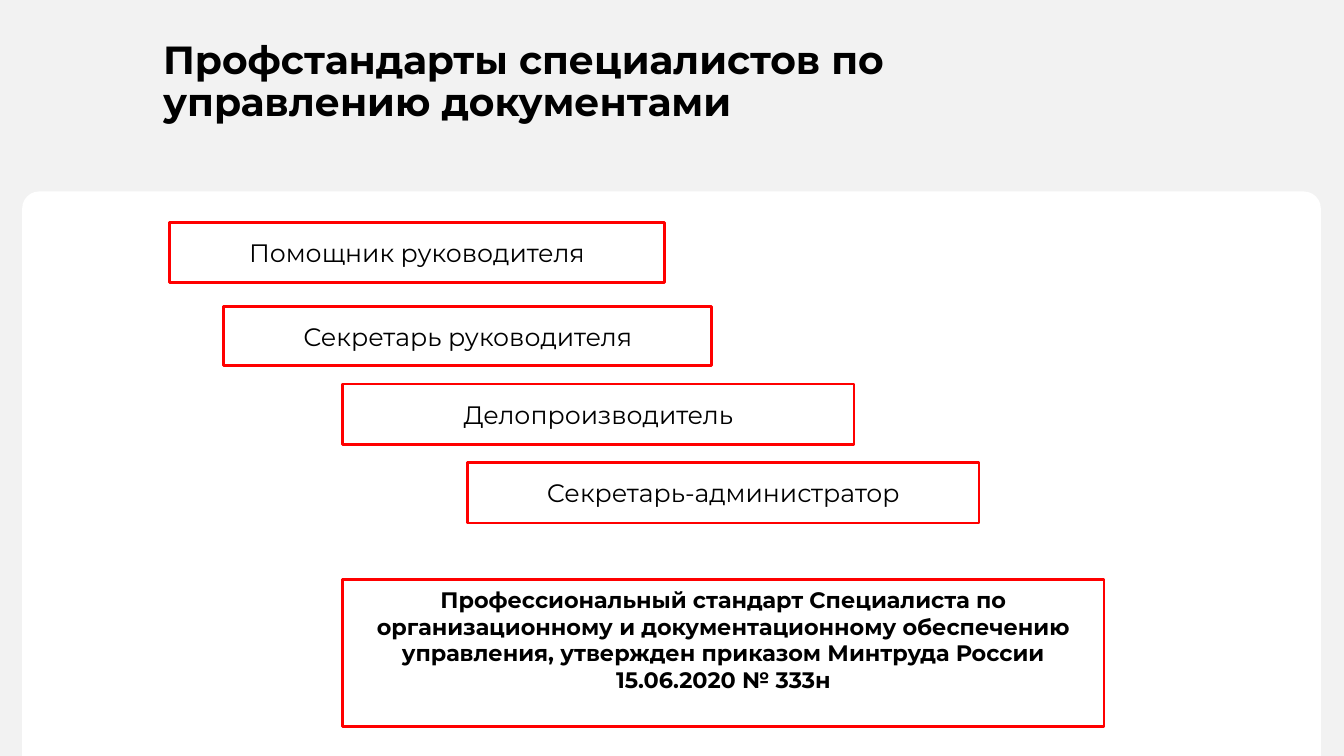
from dataclasses import dataclass

from pptx import Presentation
from pptx.dml.color import RGBColor
from pptx.enum.shapes import MSO_SHAPE
from pptx.enum.text import MSO_ANCHOR, PP_ALIGN
from pptx.shapes.autoshape import Shape
from pptx.slide import Slide
from pptx.util import Pt

PX = 9144  # EMU per px, 100 px to the inch
FONT = "Montserrat"
COLORS = {"backdrop": "F2F2F2", "panel": "FFFFFF", "frame": "FF0000", "text": "000000"}

RECTANGLE = MSO_SHAPE.RECTANGLE
ROUNDED_TOP = MSO_SHAPE.ROUND_2_SAME_RECTANGLE
MIDDLE = MSO_ANCHOR.MIDDLE
LEFT, CENTER = PP_ALIGN.LEFT, PP_ALIGN.CENTER


@dataclass(frozen=True)
class Standard:
    """A framed professional standard, in px."""
    text: str
    left: int
    top: int
    width: int
    height: int
    size: int = 18
    bold: bool = False
    bottom_inset: int = 5


STANDARDS = [
    Standard("Помощник руководителя", 168, 221, 491, 59),
    Standard("Секретарь руководителя", 222, 304, 484, 59),
    Standard("Делопроизводитель", 340, 381, 507, 60),
    Standard(
        "Профессиональный стандарт Специалиста по организационному и "
        "документационному обеспечению управления, утвержден приказом "
        "Минтруда России 15.06.2020 № 333н",
        340, 575, 755, 146, size=16, bold=True, bottom_inset=32,
    ),
    Standard("Секретарь-администратор", 464, 459, 507, 60),
]


def color(name: str) -> RGBColor:
    return RGBColor.from_string(COLORS[name])


def write(shape: Shape, text: str, size: int, bold: bool, align: PP_ALIGN) -> None:
    frame = shape.text_frame
    frame.word_wrap = True
    frame.vertical_anchor = MIDDLE
    frame.text = text
    paragraph = frame.paragraphs[0]
    paragraph.alignment = align
    font = paragraph.runs[0].font
    font.name, font.size, font.bold = FONT, Pt(size), bold
    font.color.rgb = color("text")


def add_panel(slide: Slide) -> None:
    panel = slide.shapes.add_shape(ROUNDED_TOP, 22 * PX, 190 * PX, 1288 * PX, 560 * PX)
    panel.shadow.inherit = False
    panel.adjustments[0] = 0.03
    panel.adjustments[1] = 0
    panel.fill.solid()
    panel.fill.fore_color.rgb = color("panel")
    panel.line.fill.background()


def add_heading(slide: Slide, text: str) -> None:
    heading = slide.shapes.add_textbox(152 * PX, 35 * PX, 902 * PX, 94 * PX)
    write(heading, text, 28, True, LEFT)
    heading.text_frame.paragraphs[0].line_spacing = 0.9


def add_standard(slide: Slide, standard: Standard) -> None:
    box = slide.shapes.add_shape(
        RECTANGLE, standard.left * PX, standard.top * PX,
        standard.width * PX, standard.height * PX,
    )
    box.shadow.inherit = False
    box.fill.background()
    box.line.color.rgb = color("frame")
    box.line.width = Pt(2)
    write(box, standard.text, standard.size, standard.bold, CENTER)
    box.text_frame.margin_bottom = standard.bottom_inset * PX


def main() -> None:
    presentation = Presentation()
    presentation.slide_width = 1333 * PX
    presentation.slide_height = 750 * PX
    slide = presentation.slides.add_slide(presentation.slide_layouts[6])

    # Backdrop and white panel
    slide.background.fill.solid()
    slide.background.fill.fore_color.rgb = color("backdrop")
    add_panel(slide)

    # Heading and the cascade of standards
    add_heading(slide, "Профстандарты специалистов по управлению документами")
    for standard in STANDARDS:
        add_standard(slide, standard)

    presentation.save("out.pptx")


if __name__ == "__main__":
    main()
